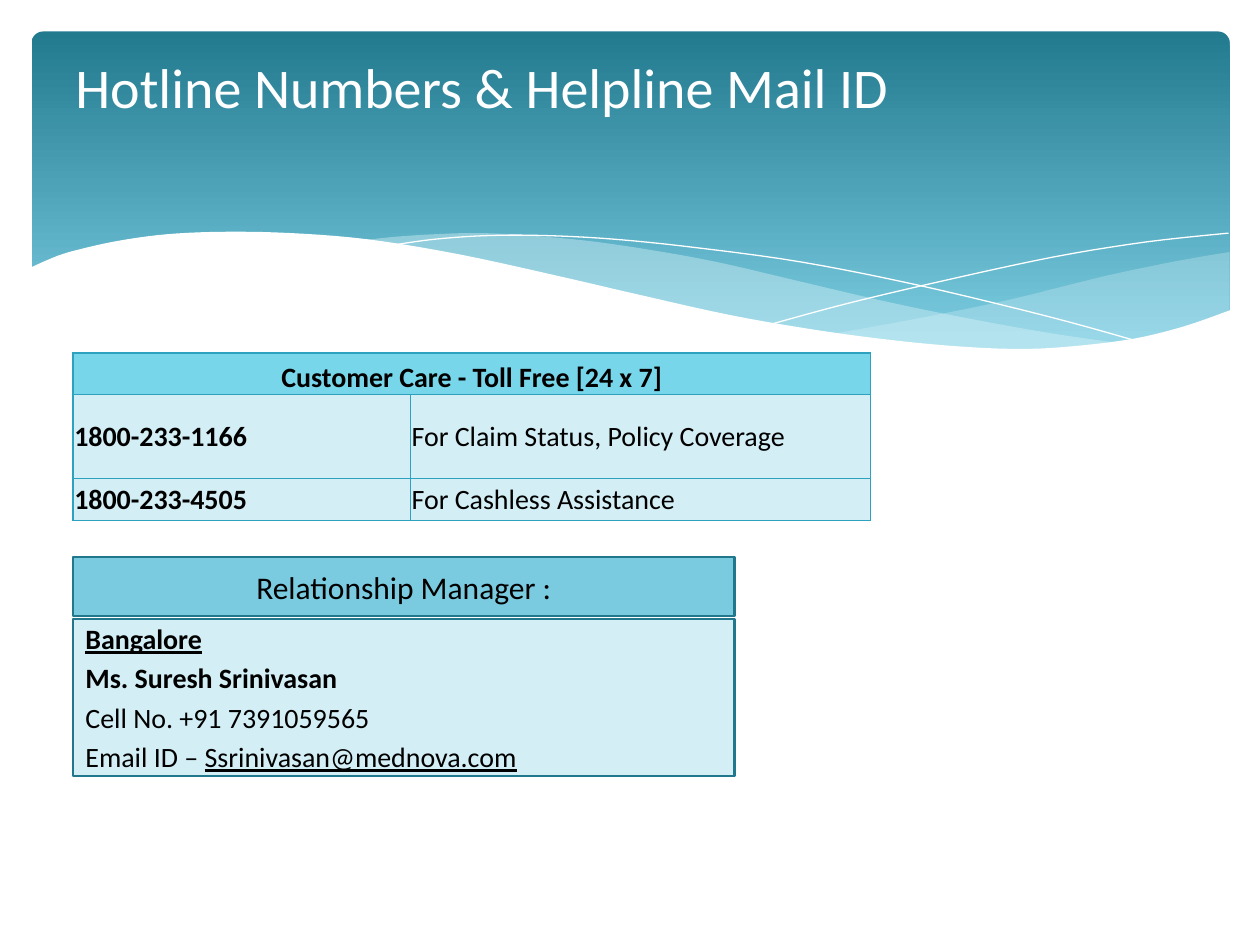
from itertools import chain

from lxml import etree
from pptx import Presentation, util as u
from pptx.dml import color
from pptx.enum import shapes, text
from pptx.oxml import ns

COLUMNS, ROWS = 100, 75
FONT = "Calibri"
WHITE, BLACK, PALE, EDGE = "FFFFFF", "000000", "D3EEF5", "21788D"

presentation = Presentation()
presentation.slide_width, presentation.slide_height = u.Inches(10), u.Inches(7.5)
COLUMN = presentation.slide_width // COLUMNS
ROW = presentation.slide_height // ROWS

RIGHT_WAVE = [
    [(97.6, 20), (93.5, 20.7), (89.1, 21.6), (86.1, 22.3), (80.5, 23.7),
     (75.3, 24.8), (70.6, 25.7), (66.1, 26.5)],
    [(66.1, 26.5), (70.5, 27.1), (74.5, 27.5), (79.2, 27.7), (83.5, 27.7),
     (88.1, 27.3), (92.1, 26.5), (94.9, 25.7), (97.6, 24.7)],
]
MIDDLE_WAVE = [
    [(89.3, 27.3), (83.7, 26.5), (77.5, 25.4), (70.6, 24), (62.9, 22.2),
     (56.9, 20.8), (51.4, 19.8), (46.5, 19.1), (42, 18.7), (38, 18.5),
     (34.4, 18.6), (31.3, 18.8), (28.6, 19.1)],
    [(28.6, 19.1), (34.2, 19.9), (40.4, 21.1), (44.9, 22.2), (53, 24),
     (60.1, 25.5), (66.5, 26.6), (72.2, 27.4), (77.3, 27.7), (81.8, 27.8),
     (85.7, 27.7), (89.3, 27.3)],
]
FALLING_LINE = [[
    (30.9, 19.5), (34.4, 19), (38.7, 18.7), (43.3, 18.7), (48.9, 19),
    (55.6, 19.7), (63.6, 20.8), (72.7, 22.6), (83.1, 25.1), (90.7, 27.2),
]]
RISING_LINE = [[
    (61.3, 25.7), (67.2, 24.1), (74.8, 22.3), (83.6, 20.4), (91, 19.2), (97.5, 18.5),
]]
WHITE_WAVE = [
    [(97.7, 24.6), (94, 25.9), (89.9, 26.9), (85, 27.5), (80.9, 27.7),
     (76.1, 27.5), (70.8, 27), (64.8, 26.2), (57.9, 25), (50.3, 23.3),
     (44.7, 22), (36.5, 20.2), (29.2, 19), (23, 18.5), (17.7, 18.4),
     (13.2, 18.6), (9.5, 19.1), (6.7, 19.7), (4.6, 20.3), (2.3, 21.3)],
    [(2.3, 21.3), (2.3, 32.9)],
    [(2.3, 32.9), (97.7, 32.9)],
]


def rgb(value):
    return color.RGBColor.from_string(value)


def apply(target, formats):
    for name, value in formats.items():
        setattr(target, name, value)


def place(left, top, width, height):
    return (u.Emu(round(left * COLUMN)), u.Emu(round(top * ROW)),
            u.Emu(round(width * COLUMN)), u.Emu(round(height * ROW)))


def paint(shape, fill=None, line=None, width=1.25, opacity=100):
    shape.shadow.inherit = False
    if fill:
        shape.fill.solid()
        shape.fill.fore_color.rgb = rgb(fill)
        if opacity < 100:
            tone = shape._element.spPr.find(".//" + ns.qn("a:srgbClr"))
            etree.SubElement(tone, ns.qn("a:alpha"), val=str(opacity * 1000))
    else:
        shape.fill.background()
    if line:
        shape.line.color.rgb = rgb(line)
        shape.line.width = u.Pt(width)
    else:
        shape.line.fill.background()


def write(paragraph, runs, size, tone=BLACK, **formats):
    apply(paragraph, formats)
    for words, style in runs:
        run = paragraph.add_run()
        run.text = words
        apply(run.font, {"name": FONT, "size": u.Pt(size), **style})
        run.font.color.rgb = rgb(tone)


def smooth(points, steps=5):
    padded = [points[0], *points, points[-1]]
    curve = [points[0]]
    for a, b, c, d in zip(padded, padded[1:], padded[2:], padded[3:]):
        for step in range(1, steps + 1):
            t = step / steps
            curve.append(tuple(
                (2 * q + (r - p) * t + (2 * p - 5 * q + 4 * r - s) * t ** 2
                 + (3 * q - p - 3 * r + s) * t ** 3) / 2
                for p, q, r, s in zip(a, b, c, d)))
    return curve


def add_wave(slide, box, edges, closed, **look):
    points = [((box[0] + x) * COLUMN, (box[1] + y) * ROW)
              for x, y in chain.from_iterable(map(smooth, edges))]
    builder = slide.shapes.build_freeform(*points[0])
    builder.add_line_segments(points[1:], close=closed)
    paint(builder.convert_to_shape(), **look)


def add_banner(slide, box):
    left, top, width, height = box
    margin = 2.5
    panel = slide.shapes.add_shape(
        shapes.MSO_SHAPE.ROUNDED_RECTANGLE,
        *place(left + margin, top + margin, width - 2 * margin + 0.1, height - 2 * margin))
    panel.adjustments[0] = 0.034
    paint(panel)
    panel.fill.gradient()
    panel.fill.gradient_angle = 270
    for stop, position, tone in zip(panel.fill.gradient_stops, (0, 0.9), ("227A8F", "7ACBE0")):
        stop.position = position
        stop.color.rgb = rgb(tone)
    add_wave(slide, box, RIGHT_WAVE, True, fill="DEF5FA", opacity=29)
    add_wave(slide, box, MIDDLE_WAVE, True, fill="DEF5FA", opacity=40)
    for edges in (FALLING_LINE, RISING_LINE):
        add_wave(slide, box, edges, False, line=WHITE, width=0)
    add_wave(slide, box, WHITE_WAVE, True, fill=WHITE)


def add_title(slide, box, words):
    frame = slide.shapes.add_textbox(*place(*box)).text_frame
    frame.word_wrap = True
    write(frame.paragraphs[0], [(words, {})], 32, WHITE)


def add_borders(cell, tone):
    properties = cell._tc.get_or_add_tcPr()
    for index, side in enumerate(("lnL", "lnR", "lnT", "lnB")):
        border = etree.Element(ns.qn("a:" + side), w=str(u.Pt(1)))
        fill = etree.SubElement(border, ns.qn("a:solidFill"))
        etree.SubElement(fill, ns.qn("a:srgbClr"), val=tone)
        properties.insert(index, border)


def add_hotlines(slide, box, heading, entries):
    left, top, width, height = place(*box)
    row_weights = (1, 2, 1)
    table = slide.shapes.add_table(len(row_weights), 2, left, top, width, height).table
    table.columns[0].width = round(width * 0.423)
    table.columns[1].width = width - table.columns[0].width
    for row, weight in zip(table.rows, row_weights):
        row.height = height * weight // sum(row_weights)
    table.cell(0, 0).merge(table.cell(0, 1))
    for row, words in enumerate([(heading, ""), *entries]):
        for column, label in enumerate(words):
            cell = table.cell(row, column)
            edge = u.Inches(0.01)
            apply(cell, {
                "margin_left": edge, "margin_right": edge, "margin_top": edge, "margin_bottom": 0,
                "vertical_anchor": text.MSO_ANCHOR.MIDDLE if row else text.MSO_ANCHOR.BOTTOM})
            cell.fill.solid()
            cell.fill.fore_color.rgb = rgb(PALE if row else "78D6EA")
            add_borders(cell, "2DA2BF")
            if label:
                write(cell.text_frame.paragraphs[0], [(label, {"bold": column == 0})], 16,
                      alignment=text.PP_ALIGN.LEFT if row else text.PP_ALIGN.CENTER)


def add_panel(slide, box, fill, lines, size, **formats):
    shape = slide.shapes.add_shape(shapes.MSO_SHAPE.RECTANGLE, *place(*box))
    paint(shape, fill, EDGE)
    frame = shape.text_frame
    apply(frame, {"word_wrap": True, "vertical_anchor": text.MSO_ANCHOR.MIDDLE})
    for index, runs in enumerate(lines):
        paragraph = frame.add_paragraph() if index else frame.paragraphs[0]
        write(paragraph, runs, size, **formats)


def add_manager(slide, box, heading, lines):
    left, top, width, height = box
    heading_height, gap = 4.7, 0.2
    body_top = heading_height + gap
    add_panel(slide, (left, top, width, heading_height), "7ACBE0", [[(heading, {})]], 18,
              alignment=text.PP_ALIGN.CENTER)
    add_panel(slide, (left, top + body_top, width, height - body_top), PALE, lines, 16,
              alignment=text.PP_ALIGN.LEFT, space_before=u.Pt(3.2))


def main():
    slide = presentation.slides.add_slide(presentation.slide_layouts[6])
    add_banner(slide, (0, 0, 100, 32))
    add_hotlines(slide, (5.8, 28, 63.3, 13.3), "Customer Care - Toll Free [24 x 7]", [
        ("1800-233-1166", "For Claim Status, Policy Coverage"),
        ("1800-233-4505", "For Cashless Assistance"),
    ])
    add_title(slide, (5, 3.7, 90, 13.7), "Hotline Numbers & Helpline Mail ID")
    add_manager(slide, (5.8, 44.2, 52.5, 17.4), "Relationship Manager :", [
        [("Bangalore", {"bold": True, "underline": True})],
        [("Ms. Suresh Srinivasan", {"bold": True})],
        [("Cell No. +91 7391059565", {})],
        [("Email ID – ", {}), ("Ssrinivasan@mednova.com", {"underline": True})],
    ])
    presentation.save("out.pptx")


if __name__ == "__main__":
    main()
